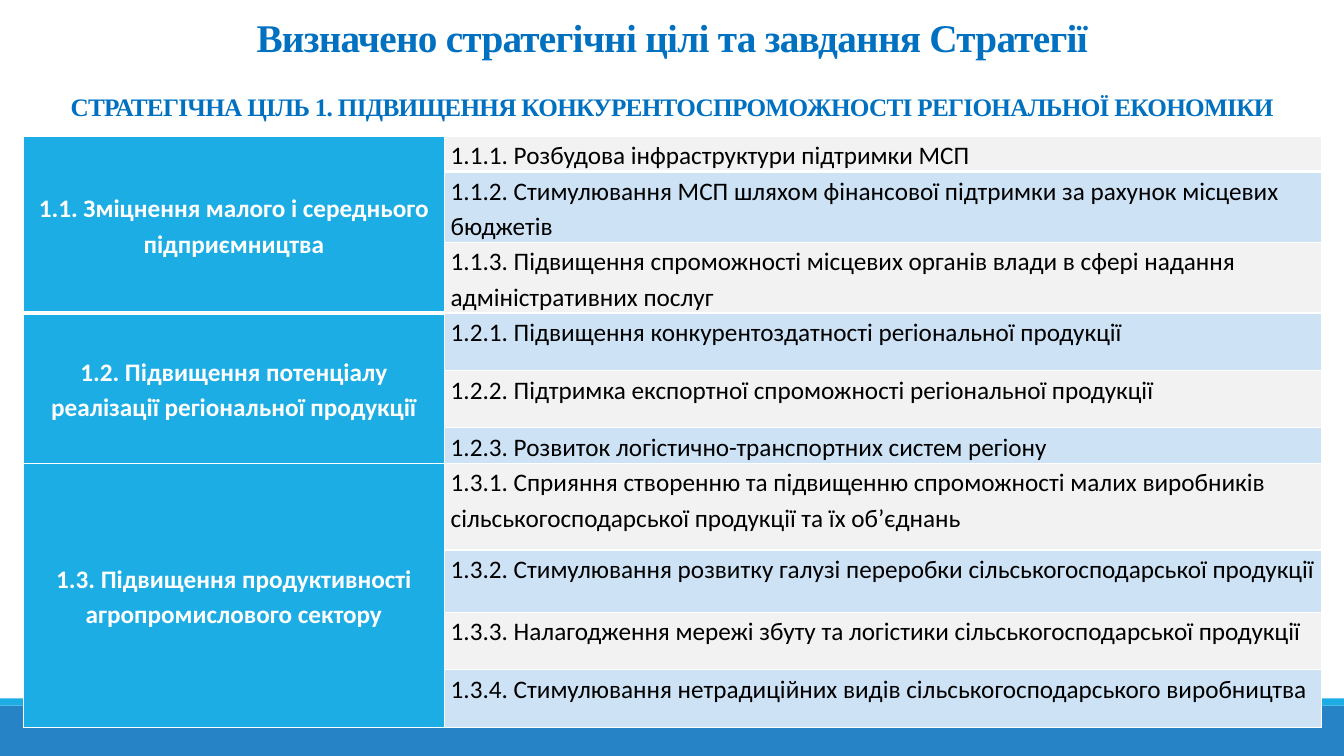
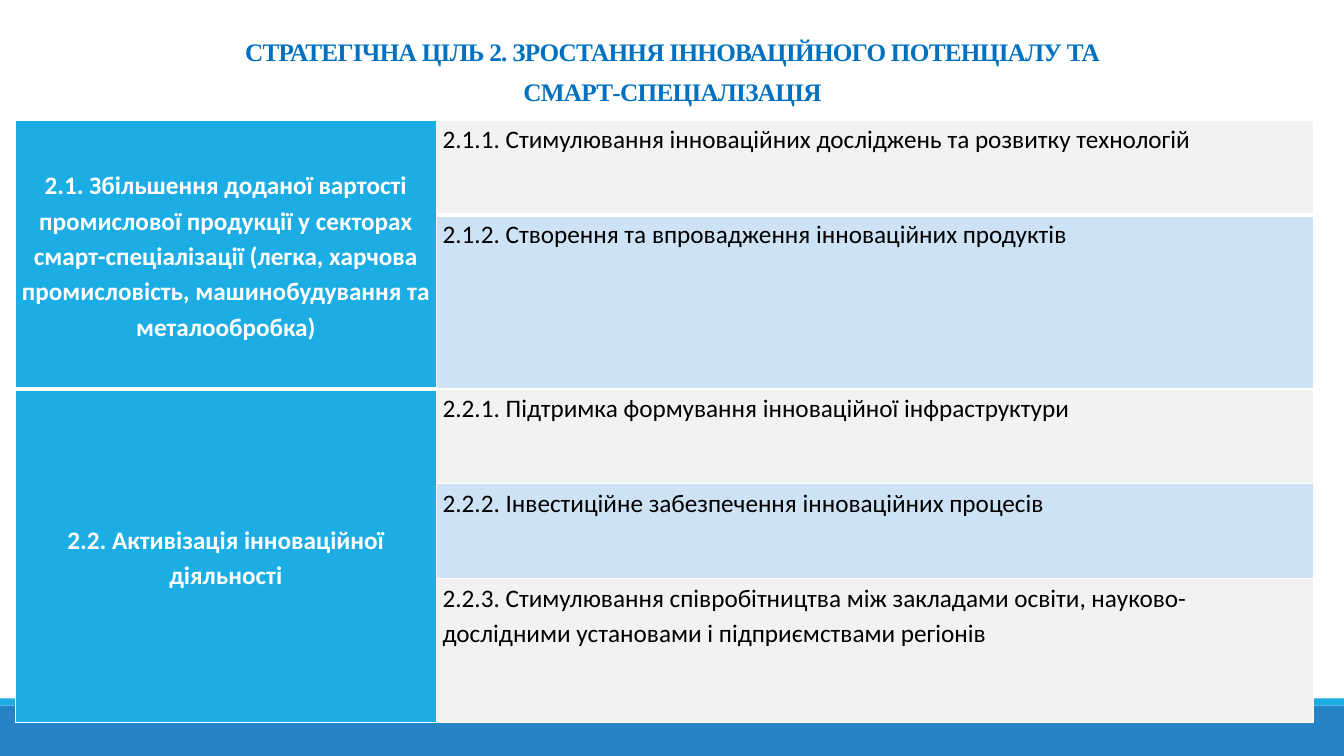
from lxml.etree import SubElement
from pptx import Presentation
from pptx.dml.color import RGBColor
from pptx.enum.shapes import MSO_SHAPE
from pptx.enum.text import MSO_ANCHOR, PP_ALIGN
from pptx.oxml.ns import qn
from pptx.util import Inches, Pt

COLORS = {
    "band": "2683C6",
    "accent": "1CADE4",
    "heading": "0070C0",
    "pale": "F2F2F2",
    "tint": "CDE3F5",
    "white": "FFFFFF",
    "black": "000000",
}
WIDTH, HEIGHT = 13.33, 7.5
GOAL_WIDTH, TASK_WIDTH = 4.18, 8.7
CELL_INSET = 0.06
THIN, THICK = 1, 3

SME_GOALS = [
    ("1.1. Зміцнення малого і середнього підприємництва", [
        ("1.1.1. Розбудова інфраструктури підтримки МСП", 0.35),
        ("1.1.2. Стимулювання МСП шляхом фінансової підтримки за рахунок місцевих бюджетів", 0.7),
        ("1.1.3. Підвищення спроможності місцевих органів влади в сфері надання адміністративних послуг", 0.7),
    ]),
    ("1.2. Підвищення потенціалу реалізації регіональної продукції", [
        ("1.2.1. Підвищення конкурентоздатності регіональної продукції", 0.57),
        ("1.2.2. Підтримка експортної спроможності регіональної продукції", 0.57),
        ("1.2.3. Розвиток логістично-транспортних систем регіону", 0.35),
    ]),
    ("1.3. Підвищення продуктивності агропромислового сектору", [
        ("1.3.1. Сприяння створенню та підвищенню спроможності малих виробників "
         "сільськогосподарської продукції та їх об’єднань", 0.86),
        ("1.3.2. Стимулювання розвитку галузі переробки сільськогосподарської продукції", 0.62),
        ("1.3.3. Налагодження мережі збуту та логістики сільськогосподарської продукції", 0.57),
        ("1.3.4. Стимулювання нетрадиційних видів сільськогосподарського виробництва", 0.57),
    ]),
]
INNOVATION_GOALS = [
    ("2.1. Збільшення доданої вартості промислової продукції у секторах смарт-спеціалізації "
     "(легка, харчова промисловість, машинобудування та металообробка)", [
         ("2.1.1. Стимулювання інноваційних досліджень та розвитку технологій", 0.94),
         ("2.1.2. Створення та впровадження інноваційних продуктів", 1.73),
     ]),
    ("2.2. Активізація інноваційної діяльності", [
        ("2.2.1. Підтримка формування інноваційної інфраструктури", 0.94),
        ("2.2.2. Інвестиційне забезпечення інноваційних процесів", 0.94),
        ("2.2.3. Стимулювання співробітництва між закладами освіти, "
         "науково-дослідними установами і підприємствами регіонів", 1.43),
    ]),
]


def rgb(name):
    return RGBColor.from_string(COLORS[name])


def write(frame, text, size=18, font="Calibri", color="black", bold=False,
          align=PP_ALIGN.LEFT, line_spacing=1.15, gap=0, tracking=0):
    frame.word_wrap = True
    for index, line in enumerate(text.split("\n")):
        paragraph = frame.add_paragraph() if index else frame.paragraphs[0]
        paragraph.alignment = align
        paragraph.line_spacing = line_spacing
        paragraph.space_before = Pt(gap if index else 0)
        run = paragraph.add_run()
        run.text = line
        run.font.size = Pt(size)
        run.font.name = font
        run.font.bold = bold
        run.font.color.rgb = rgb(color)
        if tracking:
            run.font._element.set("spc", str(int(tracking * 100)))


def add_band(slide, top, height, color):
    band = slide.shapes.add_shape(
        MSO_SHAPE.RECTANGLE, 0, Inches(top), Inches(WIDTH), Inches(height))
    band.shadow.inherit = False
    band.fill.solid()
    band.fill.fore_color.rgb = rgb(color)
    band.line.fill.background()


def add_strategy_slide(deck):
    slide = deck.slides.add_slide(deck.slide_layouts[6])
    add_band(slide, 7, 0.5, "band")
    add_band(slide, 6.93, 0.07, "accent")
    return slide


def add_heading(slide, text, left, top, width, height, size=18):
    heading = slide.shapes.add_textbox(
        Inches(left), Inches(top), Inches(width), Inches(height))
    write(heading.text_frame, text, size=size, font="Times New Roman",
          color="heading", bold=True, align=PP_ALIGN.CENTER,
          line_spacing=0.85, gap=10, tracking=-0.5)


def set_borders(cell, index):
    widths = {
        "a:lnL": THIN,
        "a:lnR": THIN,
        "a:lnT": THICK if index == 1 else THIN,
        "a:lnB": THICK if index == 0 else THIN,
    }
    properties = cell._tc.get_or_add_tcPr()
    for edge, width in widths.items():
        border = SubElement(properties, qn(edge), w=str(Pt(width)))
        paint = SubElement(border, qn("a:solidFill"))
        SubElement(paint, qn("a:srgbClr"), val=COLORS["white"])


def fill_cell(cell, text, fill, index, anchor=MSO_ANCHOR.TOP, **text_format):
    set_borders(cell, index)
    cell.fill.solid()
    cell.fill.fore_color.rgb = rgb(fill)
    cell.margin_left = cell.margin_right = Inches(CELL_INSET)
    cell.margin_top = cell.margin_bottom = 0
    cell.vertical_anchor = anchor
    write(cell.text_frame, text, **text_format)


def add_goals_table(slide, goals, left, top):
    heights = [height for _, tasks in goals for _, height in tasks]
    table = slide.shapes.add_table(
        len(heights), 2, Inches(left), Inches(top),
        Inches(GOAL_WIDTH + TASK_WIDTH), Inches(sum(heights))).table
    table.first_row = table.horz_banding = False
    for column, width in zip(table.columns, (GOAL_WIDTH, TASK_WIDTH)):
        column.width = Inches(width)
    for row, height in zip(table.rows, heights):
        row.height = Inches(height)

    first = 0
    for goal_index, (goal, tasks) in enumerate(goals):
        goal_cell = table.cell(first, 0)
        goal_cell.merge(table.cell(first + len(tasks) - 1, 0))
        fill_cell(goal_cell, goal, "accent", goal_index, MSO_ANCHOR.MIDDLE,
                  color="white", bold=True, align=PP_ALIGN.CENTER)
        for index, (task, _) in enumerate(tasks, first):
            fill_cell(table.cell(index, 1), task, ("pale", "tint")[index % 2], index)
        first += len(tasks)


def main():
    deck = Presentation()
    deck.slide_width, deck.slide_height = Inches(WIDTH), Inches(HEIGHT)

    economy = add_strategy_slide(deck)
    add_goals_table(economy, SME_GOALS, 0.23, 1.35)
    add_heading(economy, "СТРАТЕГІЧНА ЦІЛЬ 1. ПІДВИЩЕННЯ КОНКУРЕНТОСПРОМОЖНОСТІ РЕГІОНАЛЬНОЇ ЕКОНОМІКИ",
                0.23, 0.9, 12.87, 0.36)
    add_heading(economy, "Визначено стратегічні цілі та завдання Стратегії",
                0.23, 0.15, 12.87, 0.5, size=28)

    innovation = add_strategy_slide(deck)
    add_heading(innovation, "СТРАТЕГІЧНА ЦІЛЬ 2. ЗРОСТАННЯ ІННОВАЦІЙНОГО ПОТЕНЦІАЛУ ТА\nСМАРТ-СПЕЦІАЛІЗАЦІЯ",
                0.15, 0.36, 13.04, 0.77)
    add_goals_table(innovation, INNOVATION_GOALS, 0.15, 1.19)

    deck.save("out.pptx")


if __name__ == "__main__":
    main()
